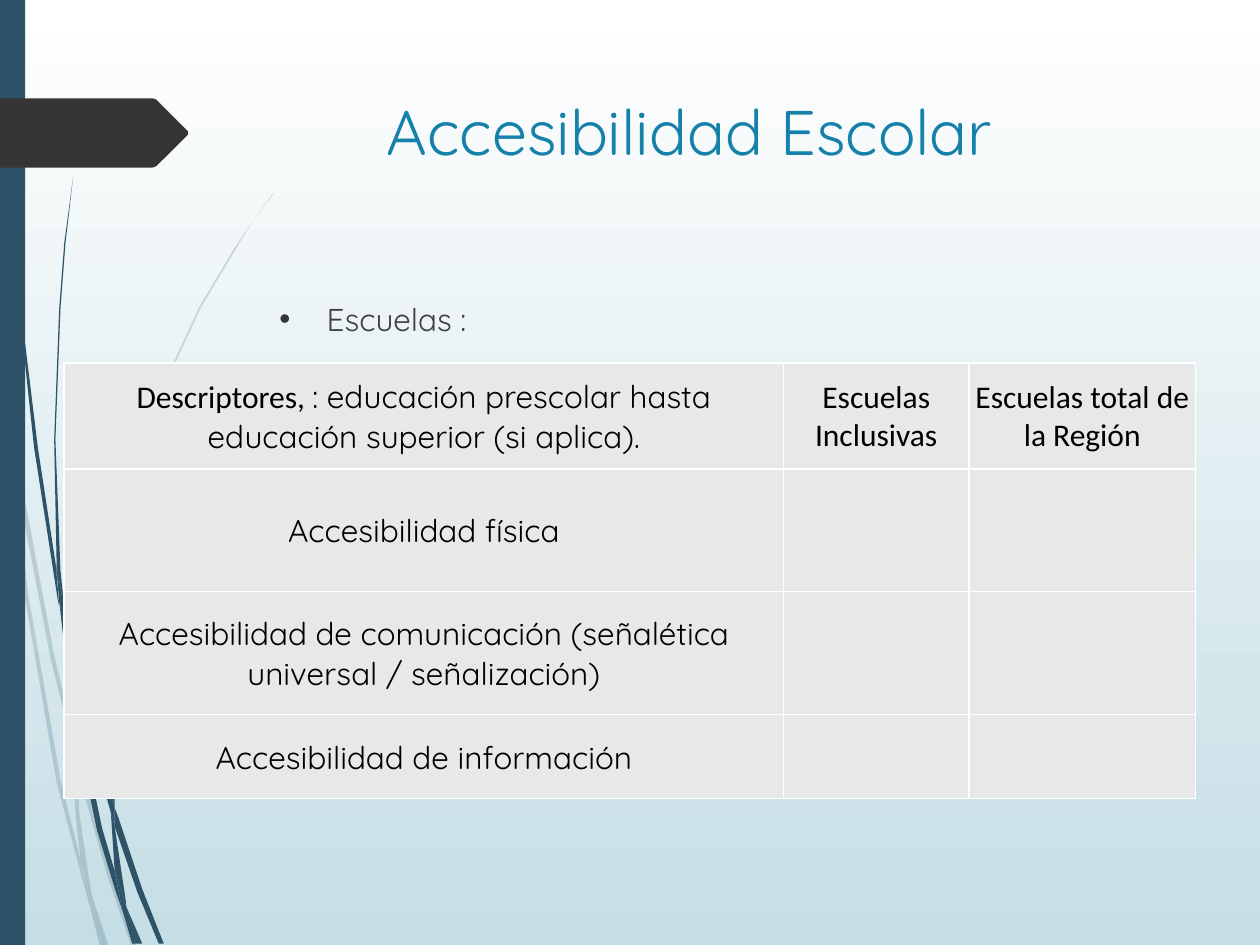
from dataclasses import dataclass
from lxml import etree
from pptx import Presentation
from pptx.dml.color import RGBColor
from pptx.enum import shapes, text
from pptx.oxml.ns import qn
from pptx.util import Pt

NAVY, CHARCOAL, BLUE, GREY = "2E5369", "353535", "1581AA", "404040"
WHITE, BLACK, CELL, SKY = "FFFFFF", "000000", "E8E8E8", "C5DEE5"
SANS, ROUND = "Calibri", "Quicksand"
GRID = Pt(0.72)  # one unit of the outline coordinates


@dataclass
class Wisps:
    """Grass blades that share a colour and an opacity in percent."""
    color: str
    opacity: int
    outlines: list


@dataclass
class Run:
    text: str
    font: str = ROUND
    size: float = 18
    color: str = BLACK


PALE = Wisps(NAVY, 20, [
    [(8, 350), (6, 322), (0, 282), (0, 299), (7, 344)],
    [(40, 522), (59, 599), (59, 586), (43, 520), (10, 345), (12, 376)],
    [(64, 607), (61, 596), (61, 610), (85, 694), (104, 750), (108, 750), (88, 692)],
    [(83, 750), (86, 750), (73, 711)],
    [(64, 683), (48, 619), (22, 469), (12, 376), (8, 350), (19, 470), (45, 621),
     (64, 693), (70, 714), (69, 707)],
    [(58, 599), (60, 646), (64, 683), (67, 692), (73, 711), (72, 706), (63, 646),
     (61, 610), (61, 608)],
    [(61, 584), (76, 462), (111, 349), (159, 245), (187, 198), (201, 175), (217, 154),
     (217, 153), (201, 175), (186, 197), (158, 244), (110, 348), (75, 461), (59, 584),
     (59, 586), (61, 596)],
    [(70, 714), (79, 750), (82, 750)],
    [(61, 608), (61, 610), (61, 596), (59, 586), (58, 599)],
    [(67, 692), (65, 683), (69, 707), (70, 714), (82, 750), (83, 750), (73, 711)],
])
DARK = Wisps(NAVY, 100, [
    [(5, 110), (14, 233), (27, 355), (46, 477), (47, 481), (45, 457), (45, 453),
     (30, 355), (15, 232), (6, 109), (4, 48), (3, 0), (2, 0), (3, 48)],
    [(73, 592), (88, 645), (88, 633), (88, 631), (77, 590), (50, 472), (53, 505)],
    [(94, 649), (91, 641), (91, 656), (109, 708), (126, 749), (130, 749), (113, 706)],
    [(91, 691), (81, 657), (60, 556), (53, 505), (47, 477), (56, 557), (77, 659),
     (92, 708), (97, 722), (96, 717)],
    [(50, 472), (48, 453), (44, 349), (48, 245), (52, 193), (58, 141), (51, 193),
     (47, 245), (43, 349), (45, 449), (49, 472)],
    [(110, 749), (113, 749), (100, 719)],
    [(47, 477), (53, 505), (50, 472), (49, 472), (45, 449), (45, 453)],
    [(91, 633), (103, 552), (131, 476), (169, 406), (191, 374), (203, 359), (216, 344),
     (215, 344), (203, 358), (191, 373), (168, 405), (129, 474), (101, 551), (88, 631),
     (91, 641)],
    [(97, 722), (105, 749), (108, 749)],
    [(88, 645), (91, 691), (96, 706), (100, 719), (100, 716), (91, 656), (90, 651)],
    [(88, 645), (90, 651), (91, 656), (91, 641), (88, 631), (88, 633)],
    [(96, 706), (91, 691), (96, 717), (97, 722), (108, 749), (110, 749), (100, 719)],
])
ARROW = [(149, 107), (124, 132), (121, 133), (0, 133), (0, 78), (121, 78),
         (124, 79), (149, 104)]

COLUMNS = [411, 106, 129.5]
ROWS = [60.5, 70, 70.5, 48]
CELLS = [
    [[Run("Descriptores, ", SANS),
      Run(": educación prescolar hasta educación superior (si aplica).")],
     [Run("Escuelas Inclusivas", SANS)],
     [Run("Escuelas total de la Región", SANS)]],
    [[Run("Accesibilidad física")], [], []],
    [[Run("Accesibilidad de comunicación (señalética universal / señalización)")], [], []],
    [[Run("Accesibilidad de información")], [], []],
]


def rgb(color: str) -> RGBColor:
    return RGBColor.from_string(color)


def set_all(obj, values: dict) -> None:
    for name, value in values.items():
        setattr(obj, name, value)


def paint(sp, color: str, opacity: int = 100) -> None:
    sp.shadow.inherit = False
    sp.line.fill.background()
    sp.fill.solid()
    sp.fill.fore_color.rgb = rgb(color)
    if opacity < 100:
        clr = sp._element.spPr.find(f".//{qn('a:srgbClr')}")
        etree.SubElement(clr, qn("a:alpha"), val=str(opacity * 1000))


def draw_outline(slide, points: list, color: str, opacity: int = 100) -> None:
    builder = slide.shapes.build_freeform(*points[0], scale=GRID)
    builder.add_line_segments(points[1:], close=True)
    paint(builder.convert_to_shape(), color, opacity)


def draw_wisps(slide, wisps: Wisps) -> None:
    for points in wisps.outlines:
        draw_outline(slide, points, wisps.color, wisps.opacity)


def write(p, runs: list) -> None:
    for run in runs:
        r = p.add_run()
        r.text = run.text
        set_all(r.font, {"name": run.font, "size": Pt(run.size), "bold": False})
        r.font.color.rgb = rgb(run.color)


def add_bullet(p, char: str, color: str, indent: float) -> None:
    pPr = p._p.get_or_add_pPr()
    pPr.set("marL", str(Pt(indent)))
    pPr.set("indent", str(-Pt(indent)))
    clr = etree.SubElement(pPr, qn("a:buClr"))
    etree.SubElement(clr, qn("a:srgbClr"), val=color)
    etree.SubElement(pPr, qn("a:buFont"), typeface="Arial")
    etree.SubElement(pPr, qn("a:buChar"), char=char)


def add_borders(cell, color: str, width: float) -> None:
    tcPr = cell._tc.get_or_add_tcPr()
    for i, side in enumerate(("lnL", "lnR", "lnT", "lnB")):
        ln = etree.Element(qn(f"a:{side}"), w=str(Pt(width)))
        fill = etree.SubElement(ln, qn("a:solidFill"))
        etree.SubElement(fill, qn("a:srgbClr"), val=color)
        tcPr.insert(i, ln)


def draw_table(slide, left: float, top: float) -> None:
    table = slide.shapes.add_table(
        len(ROWS), len(COLUMNS), Pt(left), Pt(top), Pt(sum(COLUMNS)), Pt(sum(ROWS))).table
    set_all(table, {"first_row": False, "horz_banding": False})
    for column, width in zip(table.columns, COLUMNS):
        column.width = Pt(width)
    for row, height, contents in zip(table.rows, ROWS, CELLS):
        row.height = Pt(height)
        for cell, runs in zip(row.cells, contents):
            set_all(cell, {"margin_left": Pt(0.7), "margin_right": Pt(0.7),
                           "margin_top": Pt(0.7), "margin_bottom": 0,
                           "vertical_anchor": text.MSO_ANCHOR.MIDDLE})
            cell.fill.solid()
            cell.fill.fore_color.rgb = rgb(CELL)
            add_borders(cell, WHITE, 1)
            p = cell.text_frame.paragraphs[0]
            p.alignment = text.PP_ALIGN.CENTER
            write(p, runs)


def draw_background(slide) -> None:
    fill = slide.background.fill
    fill.gradient()
    fill.gradient_angle = 270
    for stop, color, position in zip(fill.gradient_stops, (WHITE, SKY), (0, 1)):
        stop.color.rgb = rgb(color)
        stop.position = position


def main() -> None:
    prs = Presentation()
    set_all(prs, {"slide_width": Pt(720), "slide_height": Pt(540)})
    slide = prs.slides.add_slide(prs.slide_layouts[5])
    draw_background(slide)
    draw_wisps(slide, PALE)
    draw_wisps(slide, DARK)
    paint(slide.shapes.add_shape(shapes.MSO_SHAPE.RECTANGLE, 0, 0, Pt(14.4), Pt(540)), NAVY)
    draw_outline(slide, ARROW, CHARCOAL)

    title = slide.shapes.title
    set_all(title, {"left": Pt(116), "top": Pt(49), "width": Pt(556), "height": Pt(101)})
    set_all(title.text_frame, {"vertical_anchor": text.MSO_ANCHOR.TOP, "word_wrap": True})
    p = title.text_frame.paragraphs[0]
    p.alignment = text.PP_ALIGN.CENTER
    write(p, [Run("Accesibilidad Escolar", size=36, color=BLUE)])

    body = slide.shapes.add_textbox(Pt(152.6), Pt(167.8), Pt(519), Pt(297.4))
    body.text_frame.word_wrap = True
    p = body.text_frame.paragraphs[0]
    p.space_before = Pt(10)
    add_bullet(p, "•", CHARCOAL, 27)
    write(p, [Run("Escuelas :", color=GREY)])

    draw_table(slide, 36.7, 207.4)
    prs.save("out.pptx")


if __name__ == "__main__":
    main()
